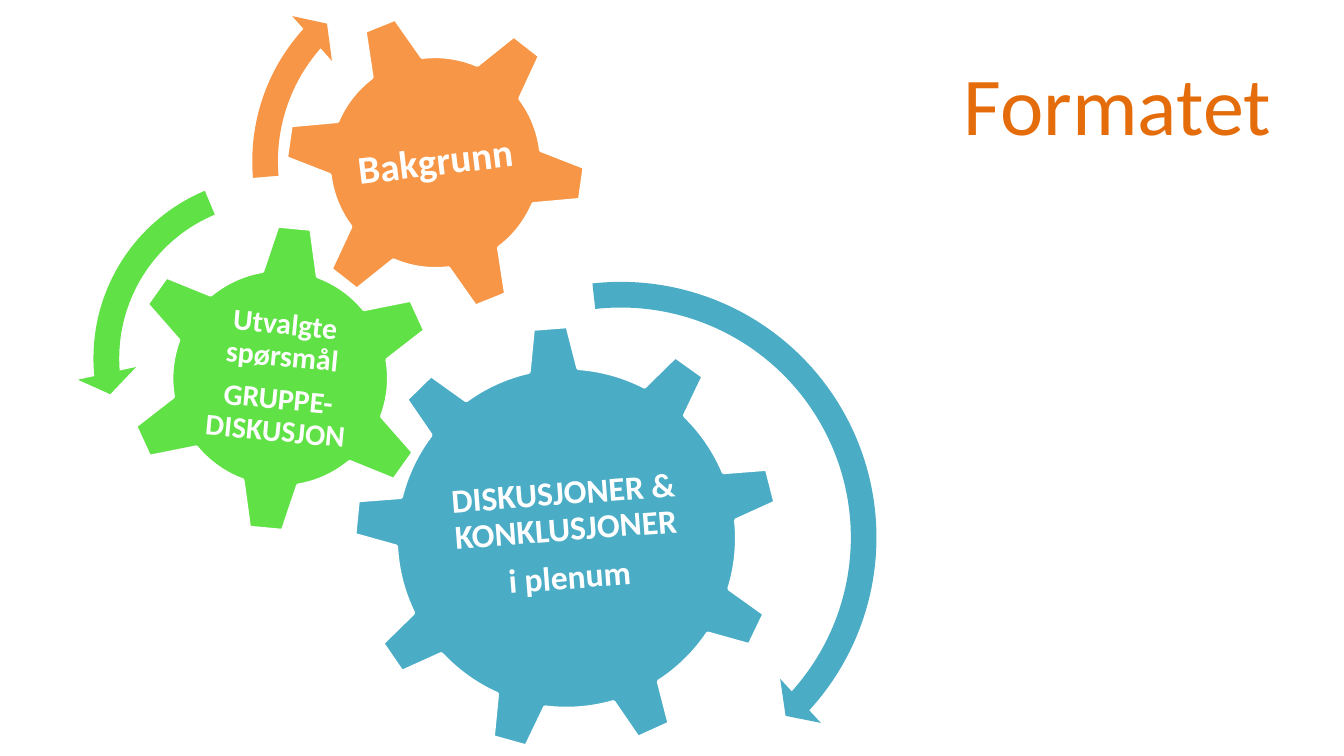
import lxml.etree
import pptx
import pptx.dml.color
import pptx.enum.shapes
import pptx.enum.text
import pptx.oxml.ns
import pptx.util

SHAPE = pptx.enum.shapes.MSO_SHAPE
ALIGN = pptx.enum.text.PP_ALIGN
MIDDLE = pptx.enum.text.MSO_ANCHOR.MIDDLE
WIDTH = pptx.util.Inches(10)
HEIGHT = WIDTH * 9 // 16
BLUE, GREEN, ORANGE, WHITE, TITLE = "4BACC6", "60E146", "F79646", "FFFFFF", "E46C0A"


def paint(target, colour):
    """Give a fill or a font colour a solid hex colour."""
    target.rgb = pptx.dml.color.RGBColor.from_string(colour)


def square(left, top, side):
    """Return a square box from percentages of the slide width."""
    return [round(WIDTH * share / 100) for share in (left, top, side, side)]


def inner(box, shares):
    """Return the part of a box given by shares of its size."""
    left, top, width, height = box
    x, y, w, h = shares
    return [round(n) for n in (left + x * width, top + y * height, w * width, h * height)]


def add_span(para, text, size, colour, bold=False):
    """Add one formatted run to a paragraph."""
    span = para.add_run()
    span.text = text
    span.font.name = "Calibri"
    span.font.size = pptx.util.Pt(size)
    span.font.bold = bold
    paint(span.font.color, colour)


def space_after(para, percent):
    """Set the space after a paragraph as a percentage of its line."""
    properties = para._p.get_or_add_pPr()
    spacing = lxml.etree.SubElement(properties, pptx.oxml.ns.qn("a:spcAft"))
    lxml.etree.SubElement(spacing, pptx.oxml.ns.qn("a:spcPct"), val=str(percent * 1000))


def add_solid(group, kind, box, colour):
    """Add a filled preset shape without shadow or outline."""
    shape = group.shapes.add_shape(kind, *box)
    shape.shadow.inherit = False
    shape.fill.solid()
    paint(shape.fill.fore_color, colour)
    shape.line.fill.background()
    return shape


def add_gear(group, box, kind, colour, turn, label_shares, label_turn, lines, size):
    """Add a turned gear with a label inside its box."""
    gear = add_solid(group, kind, box, colour)
    gear.rotation = turn
    gear.line.fill.solid()
    paint(gear.line.color, WHITE)
    gear.line.width = pptx.util.Pt(2)
    label = group.shapes.add_textbox(*inner(box, label_shares))
    label.rotation = label_turn
    frame = label.text_frame
    frame.word_wrap = True
    frame.vertical_anchor = MIDDLE
    frame.margin_left = frame.margin_right = pptx.util.Inches(0.03)
    frame.margin_top = frame.margin_bottom = pptx.util.Inches(0.03)
    for index, line in enumerate(lines):
        para = frame.add_paragraph() if index else frame.paragraphs[0]
        para.alignment = ALIGN.CENTER
        para.line_spacing = 0.9
        space_after(para, 35)
        add_span(para, line, size, WHITE, bold=True)


def add_turn_arrow(group, box, kind, colour, adjustments):
    """Add a curved arrow that shows the way a gear turns."""
    arrow = add_solid(group, kind, box, colour)
    for index, value in enumerate(adjustments):
        arrow.adjustments[index] = value


def add_gear_diagram(page):
    """Add the three gears and their turning arrows as one group."""
    group = page.shapes.add_group_shape()
    add_gear(group, square(26.3, 24.2, 31.7), SHAPE.GEAR_9, BLUE, 355.6,
             (0.2, 0.24, 0.6, 0.51), 355.6, ["DISKUSJONER & KONKLUSJONER", "i plenum"], 18)
    add_gear(group, square(9.3, 16.6, 23.1), SHAPE.GEAR_6, GREEN, 5.4,
             (0.25, 0.25, 0.5, 0.5), 5.4, ["Utvalgte spørsmål", "GRUPPE-DISKUSJON"], 16)
    add_gear(group, square(21.1, 0.8, 22.6), SHAPE.GEAR_6, ORANGE, 338.1,
             (0.22, 0.22, 0.56, 0.56), 353.1, ["Bakgrunn"], 21)
    add_turn_arrow(group, square(25.9, 19.7, 40.6), SHAPE.CIRCULAR_ARROW, BLUE,
                   (0.047, 2.99, 25.37, 158.17, 0.055))
    add_turn_arrow(group, square(5.7, 11.9, 29.5), SHAPE.LEFT_CIRCULAR_ARROW, GREEN,
                   (0.065, 4.3, 104.89, 148.38, 0.075))
    add_turn_arrow(group, square(17.5, -3.9, 31.8), SHAPE.CIRCULAR_ARROW, ORANGE,
                   (0.06, 3.94, 133.14, 105.08, 0.07))


def add_title(page, box, text):
    """Place the right-aligned slide title."""
    title = page.shapes.title
    title.left, title.top, title.width, title.height = box
    title.text_frame.vertical_anchor = MIDDLE
    para = title.text_frame.paragraphs[0]
    para.alignment = ALIGN.RIGHT
    add_span(para, text, 44, TITLE)


def main():
    """Build and save the deck."""
    deck = pptx.Presentation()
    deck.slide_width, deck.slide_height = WIDTH, HEIGHT
    page = deck.slides.add_slide(deck.slide_layouts[5])
    add_gear_diagram(page)
    add_title(page, inner((0, 0, WIDTH, HEIGHT), (0.072, 0.052, 0.884, 0.167)), "Formatet")
    deck.save("out.pptx")


if __name__ == "__main__":
    main()
